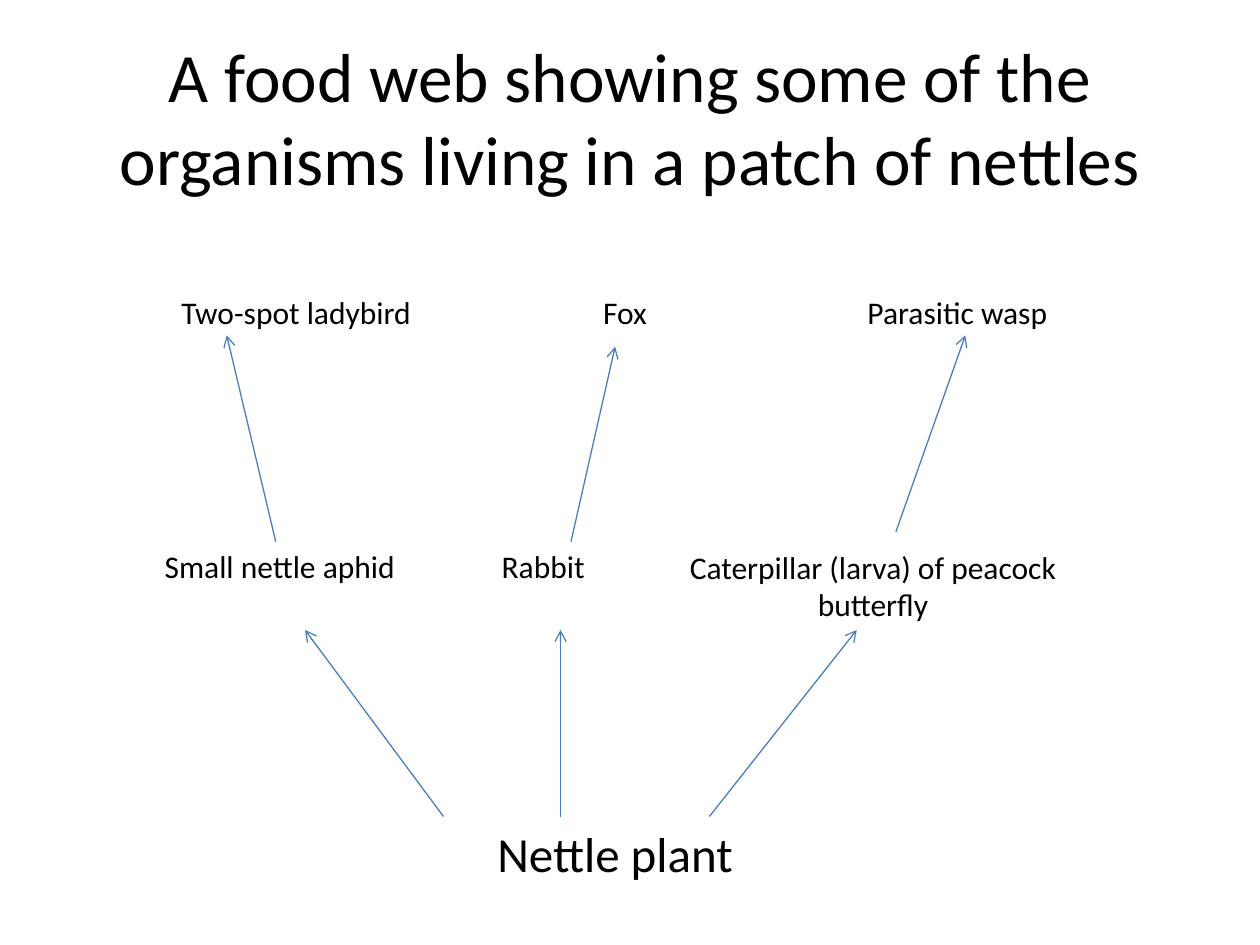
from typing import NamedTuple

from lxml import etree
from pptx import Presentation
from pptx.dml.color import RGBColor
from pptx.enum.shapes import MSO_CONNECTOR
from pptx.enum.text import MSO_ANCHOR, PP_ALIGN
from pptx.oxml.ns import qn
from pptx.slide import Slide
from pptx.util import Cm, Pt

STRAIGHT = MSO_CONNECTOR.STRAIGHT
MIDDLE = MSO_ANCHOR.MIDDLE
CENTER = PP_ALIGN.CENTER
BLACK = RGBColor(0x00, 0x00, 0x00)
BLUE = RGBColor(0x4B, 0x7E, 0xBC)
FONT = "Calibri"

# Tops and heights of the feeding levels, in cm
PREDATOR_ROW = (5.77, 1.03)
HERBIVORE_ROW = (10.9, 1.03)
TWO_LINE_HERBIVORE_ROW = (10.9, 1.8)
PLANT_ROW = (16.46, 1.45)


class Label(NamedTuple):
    """Text centred on a vertical axis; lengths in cm, size in points."""
    text: str
    center: float
    width: float
    row: tuple[float, float]
    size: float = 18


class FeedingArrow(NamedTuple):
    """Points from the food to its eater; (x, y) in cm."""
    food: tuple[float, float]
    eater: tuple[float, float]


LABELS = [
    Label("A food web showing some of the organisms living in a patch of nettles",
          12.7, 22.86, (0.76, 3.18), 39.6),
    Label("Nettle plant", 12.4, 8, PLANT_ROW, 28),
    Label("Small nettle aphid", 5.64, 5.6, HERBIVORE_ROW),
    Label("Rabbit", 10.95, 2.8, HERBIVORE_ROW),
    Label("Caterpillar (larva) of peacock butterfly", 17.6, 8.3, TWO_LINE_HERBIVORE_ROW),
    Label("Two-spot ladybird", 5.97, 5.6, PREDATOR_ROW),
    Label("Fox", 12.6, 2.8, PREDATOR_ROW),
    Label("Parasitic wasp", 19.3, 5.6, PREDATOR_ROW),
]

ARROWS = [
    FeedingArrow((8.94, 16.46), (6.15, 12.7)),
    FeedingArrow((11.3, 16.46), (11.3, 12.7)),
    FeedingArrow((14.3, 16.46), (17.27, 12.7)),
    FeedingArrow((11.51, 10.92), (12.4, 6.99)),
    FeedingArrow((18.06, 10.72), (19.46, 6.76)),
    FeedingArrow((5.56, 10.92), (4.57, 6.76)),
]


def add_label(slide: Slide, label: Label) -> None:
    top, height = label.row
    box = slide.shapes.add_textbox(Cm(label.center - label.width / 2), Cm(top),
                                   Cm(label.width), Cm(height))
    frame = box.text_frame
    frame.word_wrap = True
    frame.vertical_anchor = MIDDLE
    paragraph = frame.paragraphs[0]
    paragraph.text = label.text
    paragraph.alignment = CENTER
    paragraph.font.name = FONT
    paragraph.font.size = Pt(label.size)
    paragraph.font.color.rgb = BLACK


def add_arrow(slide: Slide, arrow: FeedingArrow) -> None:
    ends = [Cm(length) for length in arrow.food + arrow.eater]
    connector = slide.shapes.add_connector(STRAIGHT, *ends)
    connector.line.color.rgb = BLUE
    connector.line.width = Pt(0.75)
    line = connector.line._get_or_add_ln()
    etree.SubElement(line, qn("a:tailEnd"), type="arrow")
    etree.SubElement(connector._element.spPr, qn("a:effectLst"))


def main() -> None:
    presentation = Presentation()
    presentation.slide_width = Cm(25.4)
    presentation.slide_height = Cm(19.05)
    slide = presentation.slides.add_slide(presentation.slide_layouts[6])
    for label in LABELS:
        add_label(slide, label)
    for arrow in ARROWS:
        add_arrow(slide, arrow)
    presentation.save("out.pptx")


if __name__ == "__main__":
    main()
